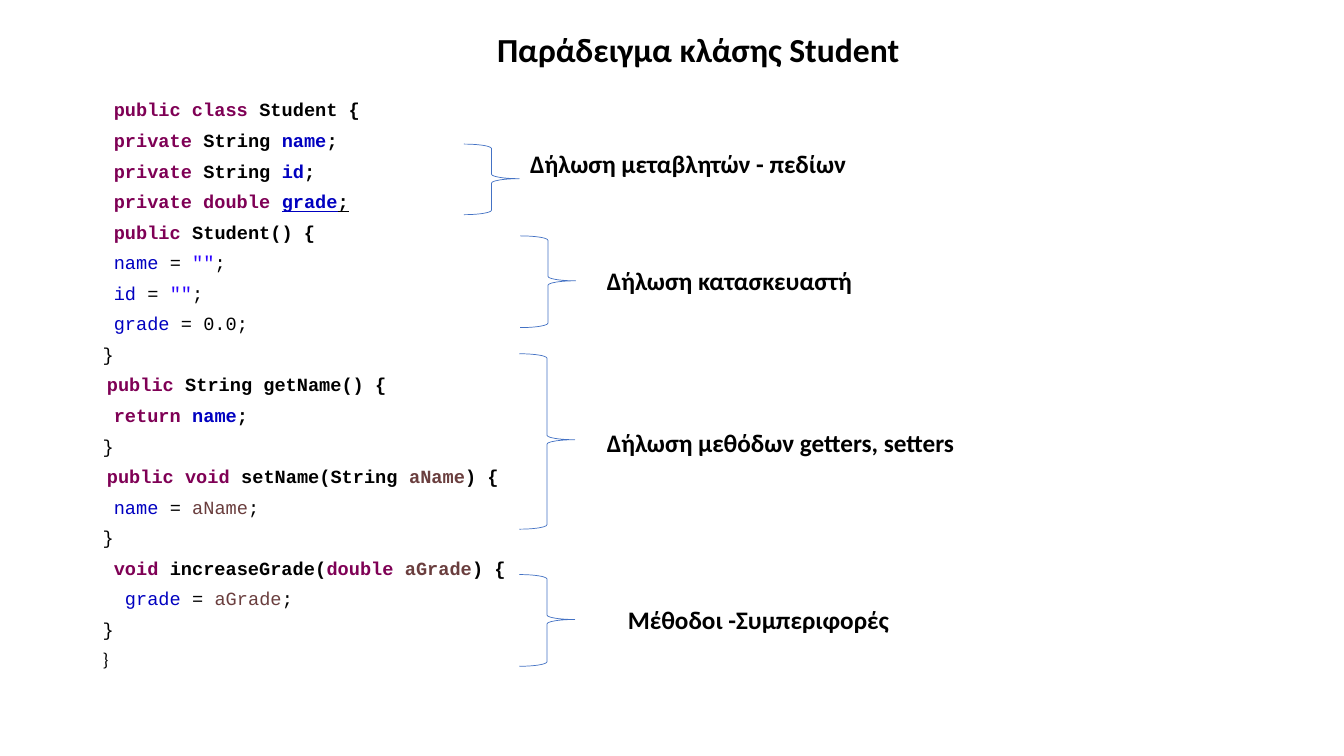
from pptx import Presentation
from pptx.dml.color import RGBColor
from pptx.enum.shapes import MSO_SHAPE
from pptx.enum.text import MSO_ANCHOR, PP_ALIGN
from pptx.util import Inches, Pt

COLORS = {
    "plain": "000000",
    "key": "7F0055",
    "field": "0000C0",
    "text": "2A00FF",
    "param": "6A3E3E",
    "brace": "4472C4",
}

CODE = [
    (True, [("key", " public class"), ("plain", " Student {")]),
    (True, [("key", " private"), ("plain", " String "), ("field", "name"), ("plain", ";")]),
    (True, [("key", " private"), ("plain", " String "), ("field", "id"), ("plain", ";")]),
    (True, [("key", " private double "), ("field", "grade", "line"), ("plain", ";", "line")]),
    (True, [("key", " public"), ("plain", " Student() {")]),
    (False, [("field", " name"), ("plain", " = "), ("text", '""'), ("plain", ";")]),
    (False, [("field", " id"), ("plain", " = "), ("text", '""'), ("plain", ";")]),
    (False, [("field", " grade"), ("plain", " = 0.0;")]),
    (False, [("plain", "}")]),
    (True, [("plain", " ", "slim"), ("key", "public"), ("plain", " String getName() {")]),
    (True, [("key", " return "), ("field", "name"), ("plain", ";")]),
    (False, [("plain", "}")]),
    (True, [("plain", " ", "slim"), ("key", "public void "), ("plain", "setName(String "),
            ("param", "aName"), ("plain", ") {")]),
    (False, [("field", " name"), ("plain", " = "), ("param", "aName"), ("plain", ";")]),
    (False, [("plain", "}")]),
    (True, [("key", " void "), ("plain", "increaseGrade("), ("key", "double "),
            ("param", "aGrade"), ("plain", ") {")]),
    (False, [("field", "  grade"), ("plain", " = "), ("param", "aGrade"), ("plain", ";")]),
    (False, [("plain", "}")]),
    (False, [("plain", "}", "slim")]),
]

BRACES = [(4.6, 1.43, 0.7), (5.16, 2.34, 0.91), (5.15, 3.51, 1.74), (5.15, 5.7, 0.91)]

LABELS = [
    (5.16, 1.42, 3.4, "Δήλωση μεταβλητών - πεδίων"),
    (5.92, 2.58, 3.4, "Δήλωση κατασκευαστή"),
    (5.92, 4.19, 5.12, "Δήλωση μεθόδων getters, setters"),
    (6.13, 5.95, 3.4, "Μέθοδοι -Συμπεριφορές"),
]


def tint(name):
    """Return the named colour."""
    return RGBColor.from_string(COLORS[name])


def add_frame(slide, left, top, width, height):
    """Add a wrapping text box and return its text frame."""
    box = slide.shapes.add_textbox(Inches(left), Inches(top), Inches(width), Inches(height))
    box.text_frame.word_wrap = True
    return box.text_frame


def style(font, face, size, bold):
    """Set the face, size and weight of a font."""
    font.name, font.size, font.bold = face, Pt(size), bold


def add_label(slide, left, top, width, height, text, size):
    """Add one bold line of text and return its frame."""
    frame = add_frame(slide, left, top, width, height)
    line = frame.paragraphs[0]
    line.text = text
    style(line.font, "Calibri", size, True)
    line.font.color.rgb = tint("plain")
    return frame


def add_title(slide, text):
    """Add the centred title."""
    frame = add_label(slide, 0.74, 0.04, 12.37, 0.94, text, 24)
    frame.vertical_anchor = MSO_ANCHOR.MIDDLE
    frame.paragraphs[0].alignment = PP_ALIGN.CENTER
    frame.paragraphs[0].line_spacing = 0.9


def add_code(slide, lines):
    """Add the coloured code listing."""
    frame = add_frame(slide, 0.92, 0.98, 4.24, 6.19)
    for index, (bold, parts) in enumerate(lines):
        line = frame.add_paragraph() if index else frame.paragraphs[0]
        line.line_spacing = 0.74
        line.space_before = Pt(10)
        style(line.font, "Courier New", 13.3, bold)
        for color, text, *marks in parts:
            run = line.add_run()
            run.text = text
            run.font.color.rgb = tint(color)
            if "line" in marks:
                run.font.underline = True
            if "slim" in marks:
                run.font.name = "Calibri"


def add_brace(slide, left, top, height):
    """Add a right brace beside a block of code."""
    brace = slide.shapes.add_shape(
        MSO_SHAPE.RIGHT_BRACE, Inches(left), Inches(top), Inches(0.55), Inches(height))
    brace.adjustments[0] = 0.08
    brace.adjustments[1] = 0.49
    brace.shadow.inherit = False
    brace.fill.background()
    brace.line.color.rgb = tint("brace")
    brace.line.width = Pt(0.5)


def main():
    """Build and save the slide."""
    deck = Presentation()
    deck.slide_width, deck.slide_height = Inches(13.33), Inches(7.5)
    slide = deck.slides.add_slide(deck.slide_layouts[6])
    add_title(slide, "Παράδειγμα κλάσης Student")
    add_code(slide, CODE)
    for place in BRACES:
        add_brace(slide, *place)
    for left, top, width, text in LABELS:
        add_label(slide, left, top, width, 0.4, text, 18)
    deck.save("out.pptx")


if __name__ == "__main__":
    main()
